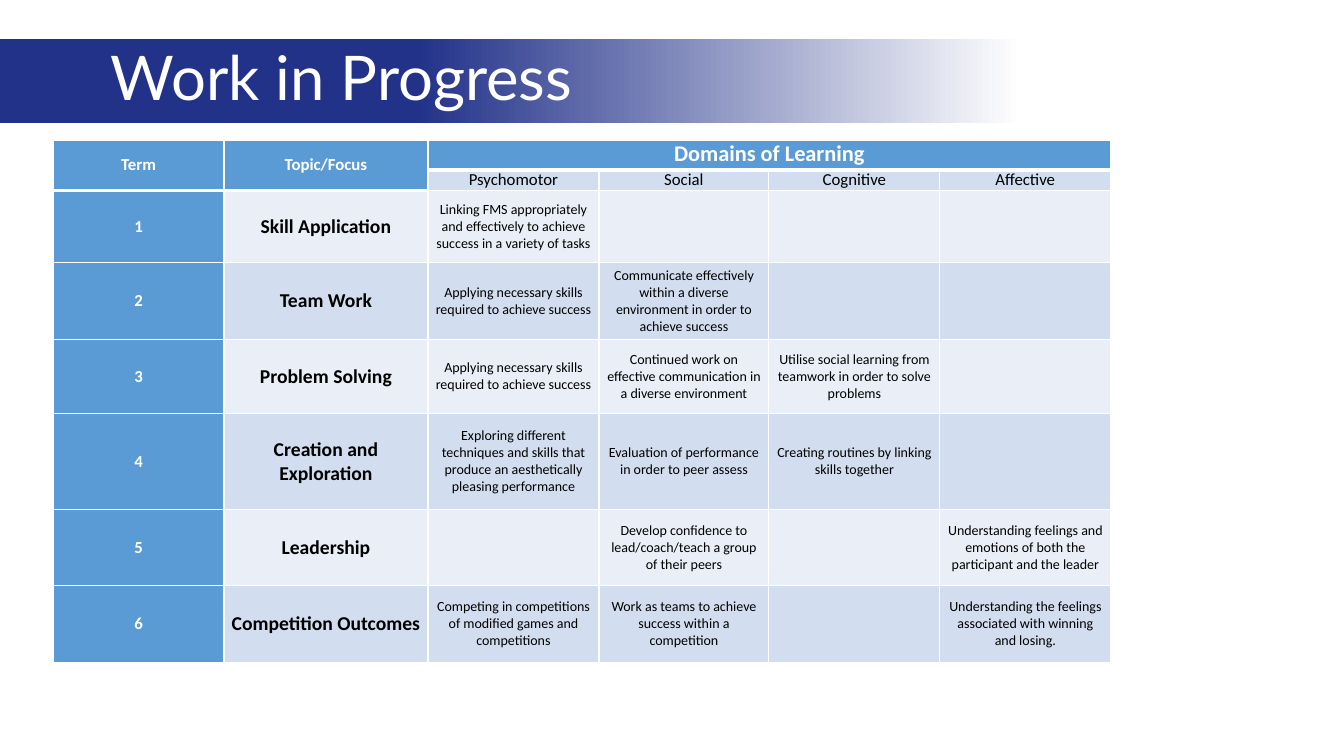
from copy import deepcopy
from dataclasses import dataclass

from lxml.etree import SubElement
from pptx import Presentation
from pptx.dml.color import RGBColor
from pptx.enum.text import MSO_ANCHOR as Anchor, MSO_AUTO_SIZE as AutoSize, PP_ALIGN as Align
from pptx.oxml.ns import qn
from pptx.util import Emu, Pt

EMU_PER_INCH = 914400
PX_PER_INCH = 100.8
COLOURS = {
    "navy": "223289",
    "white": "FFFFFF",
    "black": "000000",
    "header": "5B9BD5",
    "light": "EAEFF7",
    "dark": "D2DEEF",
}
COLUMN_WIDTHS = (171, 204, 171, 170, 171, 171)
ROW_HEIGHTS = (30, 20, 72, 77, 74, 96, 76, 77)
DOMAINS = ("Psychomotor", "Social", "Cognitive", "Affective")


@dataclass(frozen=True)
class Term:
    topic: str
    psychomotor: str = ""
    social: str = ""
    cognitive: str = ""
    affective: str = ""

    def outcomes(self) -> tuple[str, ...]:
        return self.psychomotor, self.social, self.cognitive, self.affective


TERMS = (
    Term("Skill Application",
         psychomotor="Linking FMS appropriately and effectively to achieve success in a variety of tasks"),
    Term("Team Work",
         psychomotor="Applying necessary skills required to achieve success",
         social="Communicate effectively within a diverse environment in order to achieve success"),
    Term("Problem Solving",
         psychomotor="Applying necessary skills required to achieve success",
         social="Continued work on effective communication in a diverse environment",
         cognitive="Utilise social learning from teamwork in order to solve problems"),
    Term("Creation and Exploration",
         psychomotor="Exploring different techniques and skills that produce an aesthetically pleasing performance",
         social="Evaluation of performance in order to peer assess",
         cognitive="Creating routines by linking skills together"),
    Term("Leadership",
         social="Develop confidence to lead/coach/teach a group of their peers",
         affective="Understanding feelings and emotions of both the participant and the leader"),
    Term("Competition Outcomes",
         psychomotor="Competing in competitions of modified games and competitions",
         social="Work as teams to achieve success within a competition",
         affective="Understanding the feelings associated with winning and losing."),
)


def px(length: int) -> Emu:
    return Emu(round(length * EMU_PER_INCH / PX_PER_INCH))


def colour(name: str) -> RGBColor:
    return RGBColor.from_string(COLOURS[name])


def write(frame, text: str, *, size: int, ink: str, font: str = "Calibri",
          bold: bool = False, align: Align = Align.CENTER) -> None:
    paragraph = frame.paragraphs[0]
    paragraph.alignment = align
    run = paragraph.add_run()
    run.text = text
    run.font.name = font
    run.font.size = Pt(size)
    run.font.bold = bold
    run.font.color.rgb = colour(ink)


def add_banner(slide) -> None:
    banner = slide.shapes.title
    banner.left, banner.top, banner.width, banner.height = px(0), px(39), px(1344), px(84)
    banner.fill.gradient()
    banner.fill.gradient_angle = 0
    for stop, name, position in zip(banner.fill.gradient_stops, ("navy", "white"), (0.31, 0.76)):
        stop.color.rgb = colour(name)
        stop.position = position
    stops = banner.element.spPr.find(".//" + qn("a:gsLst"))
    first, last = deepcopy(stops[0]), deepcopy(stops[-1])
    first.set("pos", "0")
    last.set("pos", "100000")
    stops.insert(0, first)
    stops.append(last)
    frame = banner.text_frame
    frame.auto_size = AutoSize.NONE
    frame.vertical_anchor = Anchor.MIDDLE
    frame.margin_left = px(111)
    write(frame, "Work in Progress", size=44, ink="white", font="Lato", align=Align.LEFT)
    frame.paragraphs[0].line_spacing = 0.9


def add_borders(cell, bottom: int) -> None:
    properties = cell._tc.get_or_add_tcPr()
    for side, width in (("L", 1), ("R", 1), ("T", 1), ("B", bottom)):
        line = SubElement(properties, qn(f"a:ln{side}"), w=str(Pt(width)))
        SubElement(SubElement(line, qn("a:solidFill")), qn("a:srgbClr"), val=COLOURS["white"])


def fill_cell(cell, text: str, *, fill: str, anchor: Anchor = Anchor.MIDDLE, **style) -> None:
    cell.fill.solid()
    cell.fill.fore_color.rgb = colour(fill)
    cell.vertical_anchor = anchor
    cell.margin_left = cell.margin_right = px(6)
    cell.margin_top = cell.margin_bottom = 0
    if text:
        write(cell.text_frame, text, **style)


def add_plan(slide) -> None:
    plan = slide.shapes.add_table(
        len(ROW_HEIGHTS), len(COLUMN_WIDTHS), px(53), px(140),
        px(sum(COLUMN_WIDTHS)), px(sum(ROW_HEIGHTS))).table
    plan.first_row = plan.horz_banding = False
    for column, width in zip(plan.columns, COLUMN_WIDTHS):
        column.width = px(width)
    for row, height in zip(plan.rows, ROW_HEIGHTS):
        row.height = px(height)
    for row in range(len(ROW_HEIGHTS)):
        for column in range(len(COLUMN_WIDTHS)):
            under_header = row == 0 or (row == 1 and column < 2)
            add_borders(plan.cell(row, column), 3 if under_header else 1)

    heading = {"fill": "header", "ink": "white", "bold": True}
    for column, label in enumerate(("Term", "Topic/Focus")):
        plan.cell(0, column).merge(plan.cell(1, column))
        fill_cell(plan.cell(0, column), label, size=12, **heading)
    plan.cell(0, 2).merge(plan.cell(0, 5))
    fill_cell(plan.cell(0, 2), "Domains of Learning", size=16, anchor=Anchor.TOP, **heading)
    for column, domain in enumerate(DOMAINS, 2):
        fill_cell(plan.cell(1, column), domain, fill="dark", size=12, ink="black", anchor=Anchor.TOP)

    for number, term in enumerate(TERMS, 1):
        row = number + 1
        band = "light" if number % 2 else "dark"
        fill_cell(plan.cell(row, 0), str(number), size=12, **heading)
        fill_cell(plan.cell(row, 1), term.topic, fill=band, size=14, ink="black", bold=True)
        for column, outcome in enumerate(term.outcomes(), 2):
            fill_cell(plan.cell(row, column), outcome, fill=band, size=10, ink="black")


def main() -> None:
    deck = Presentation()
    deck.slide_width, deck.slide_height = px(1344), px(756)
    slide = deck.slides.add_slide(deck.slide_layouts.get_by_name("Title Only"))
    add_banner(slide)
    add_plan(slide)
    deck.save("out.pptx")


if __name__ == "__main__":
    main()
